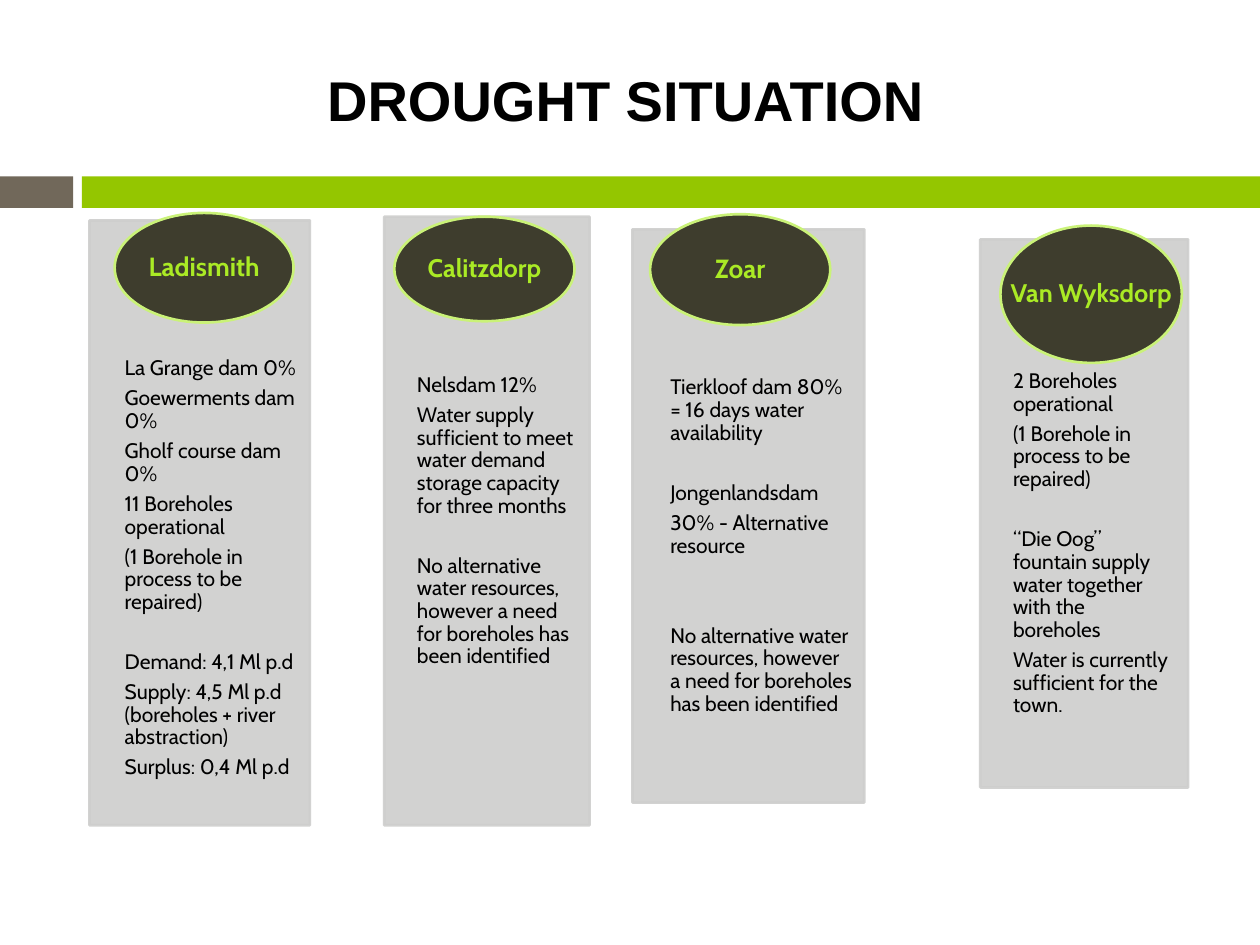
"""Build the drought situation slide with one panel per town."""
from dataclasses import dataclass

import lxml.etree
import pptx
import pptx.dml.color
import pptx.enum.shapes
import pptx.enum.text
import pptx.oxml.ns
import pptx.util
from pptx.util import Inches

COLOURS = {
    "taupe": "71685A",
    "green": "94C600",
    "panel": "CECECD",
    "badge": "3E3D2D",
    "badge_edge": "CAF278",
    "town": "AAEA25",
    "text": "000000",
}
RECTANGLE = pptx.enum.shapes.MSO_SHAPE.RECTANGLE
OVAL = pptx.enum.shapes.MSO_SHAPE.OVAL
ALIGN = pptx.enum.text.PP_ALIGN
ANCHOR = pptx.enum.text.MSO_ANCHOR
PARAGRAPH_GAP = 4.2
SKIPPED_LINE = 17.2


@dataclass(frozen=True)
class Box:
    left: float
    top: float
    width: float
    height: float

    def lengths(self) -> list:
        return [Inches(n) for n in (self.left, self.top, self.width, self.height)]


@dataclass(frozen=True)
class Fact:
    text: str
    skipped_lines: int = 0


@dataclass(frozen=True)
class Town:
    name: str
    name_size: float
    badge: Box
    panel: Box
    indent: float
    first_line: float
    facts: tuple[Fact, ...]


TOWNS = (
    Town("Ladismith", 15, Box(0.91, 1.69, 1.42, 0.87), Box(0.71, 1.75, 1.75, 4.8), 0.28, 2.84, (
        Fact("La Grange dam 0%"),
        Fact("Goewerments dam 0%"),
        Fact("Gholf course dam 0%"),
        Fact("11 Boreholes operational"),
        Fact("(1 Borehole in process to be repaired)"),
        Fact("Demand: 4,1 Ml p.d", 1),
        Fact("Supply: 4,5 Ml p.d (boreholes + river abstraction)"),
        Fact("Surplus: 0,4 Ml p.d"),
    )),
    Town("Calitzdorp", 14.5, Box(3.13, 1.72, 1.43, 0.83), Box(3.05, 1.72, 1.63, 4.83), 0.26, 2.97, (
        Fact("Nelsdam 12%"),
        Fact("Water supply sufficient to meet water demand storage capacity for three months"),
        Fact("No alternative water resources, however a need for boreholes has been identified", 1),
    )),
    Town("Zoar", 15, Box(5.16, 1.7, 1.43, 0.88), Box(5.02, 1.82, 1.84, 4.55), 0.3, 2.99, (
        Fact("Tierkloof dam 80% = 16 days water availability"),
        Fact("Jongenlandsdam", 1),
        Fact("30% - Alternative resource"),
        Fact("No alternative water resources, however a need for boreholes has been identified", 2),
    )),
    Town("Van Wyksdorp", 14.5, Box(7.94, 1.79, 1.44, 1.09), Box(7.78, 1.9, 1.65, 4.35), 0.26, 2.94, (
        Fact("2 Boreholes operational"),
        Fact("(1 Borehole in process to be repaired)"),
        Fact("“Die Oog” fountain supply water together with the boreholes", 1),
        Fact("Water is currently sufficient for the town."),
    )),
)


def rgb(colour: str) -> pptx.dml.color.RGBColor:
    return pptx.dml.color.RGBColor.from_string(COLOURS[colour])


def add_block(slide, kind, box: Box, fill: str, edge: str | None = None, opacity: int = 100):
    block = slide.shapes.add_shape(kind, *box.lengths())
    block.shadow.inherit = False
    block.fill.solid()
    block.fill.fore_color.rgb = rgb(fill)
    if edge:
        block.line.color.rgb = rgb(edge)
        block.line.width = pptx.util.Pt(1.5)
    else:
        block.line.fill.background()
    if opacity < 100:
        qn = pptx.oxml.ns.qn
        for colour in block._element.spPr.iter(qn("a:srgbClr")):
            lxml.etree.SubElement(colour, qn("a:alpha"), val=str(opacity * 1000))
    return block


def set_frame(frame, anchor, insets: tuple = (0, 0, 0, 0), wrap: bool = True) -> None:
    frame.word_wrap = wrap
    frame.vertical_anchor = anchor
    frame.margin_left, frame.margin_top, frame.margin_right, frame.margin_bottom = map(Inches, insets)


def write(paragraph, text: str, *, size: float, colour: str = "text", font: str = "Cabin",
          bold: bool = False, align=ALIGN.LEFT, spacing: float = 0.9,
          before: float = 0, after: float = 0) -> None:
    paragraph.alignment = align
    paragraph.line_spacing = spacing
    paragraph.space_before = pptx.util.Pt(before)
    paragraph.space_after = pptx.util.Pt(after)
    run = paragraph.add_run()
    run.text = text
    run.font.name = font
    run.font.size = pptx.util.Pt(size)
    run.font.bold = bold
    run.font.color.rgb = rgb(colour)


def add_town(slide, town: Town) -> None:
    panel = add_block(slide, RECTANGLE, town.panel, "panel", "panel", opacity=90)
    facts_frame = panel.text_frame
    set_frame(facts_frame, ANCHOR.TOP, (town.indent, town.first_line - town.panel.top, 0.09, 0.09))
    for index, fact in enumerate(town.facts):
        paragraph = facts_frame.add_paragraph() if index else facts_frame.paragraphs[0]
        write(paragraph, fact.text, size=12,
              before=SKIPPED_LINE * fact.skipped_lines, after=PARAGRAPH_GAP)

    badge = add_block(slide, OVAL, town.badge, "badge", "badge_edge")
    set_frame(badge.text_frame, ANCHOR.MIDDLE, wrap=False)
    write(badge.text_frame.paragraphs[0], town.name, size=town.name_size,
          colour="town", bold=True, align=ALIGN.CENTER)


def main() -> None:
    deck = pptx.Presentation()
    deck.slide_width, deck.slide_height = Inches(10), Inches(7.5)
    slide = deck.slides.add_slide(deck.slide_layouts[6])

    add_block(slide, RECTANGLE, Box(0, 1.4, 0.58, 0.25), "taupe")
    add_block(slide, RECTANGLE, Box(0.65, 1.4, 9.35, 0.25), "green")

    title = slide.shapes.add_textbox(*Box(0.12, 0.25, 9.69, 1.08).lengths())
    set_frame(title.text_frame, ANCHOR.MIDDLE, (0.1, 0.05, 0.1, 0.05))
    write(title.text_frame.paragraphs[0], "DROUGHT SITUATION", size=32, font="Arial",
          bold=True, align=ALIGN.CENTER, spacing=1.0)

    for town in TOWNS:
        add_town(slide, town)

    deck.save("out.pptx")


if __name__ == "__main__":
    main()
